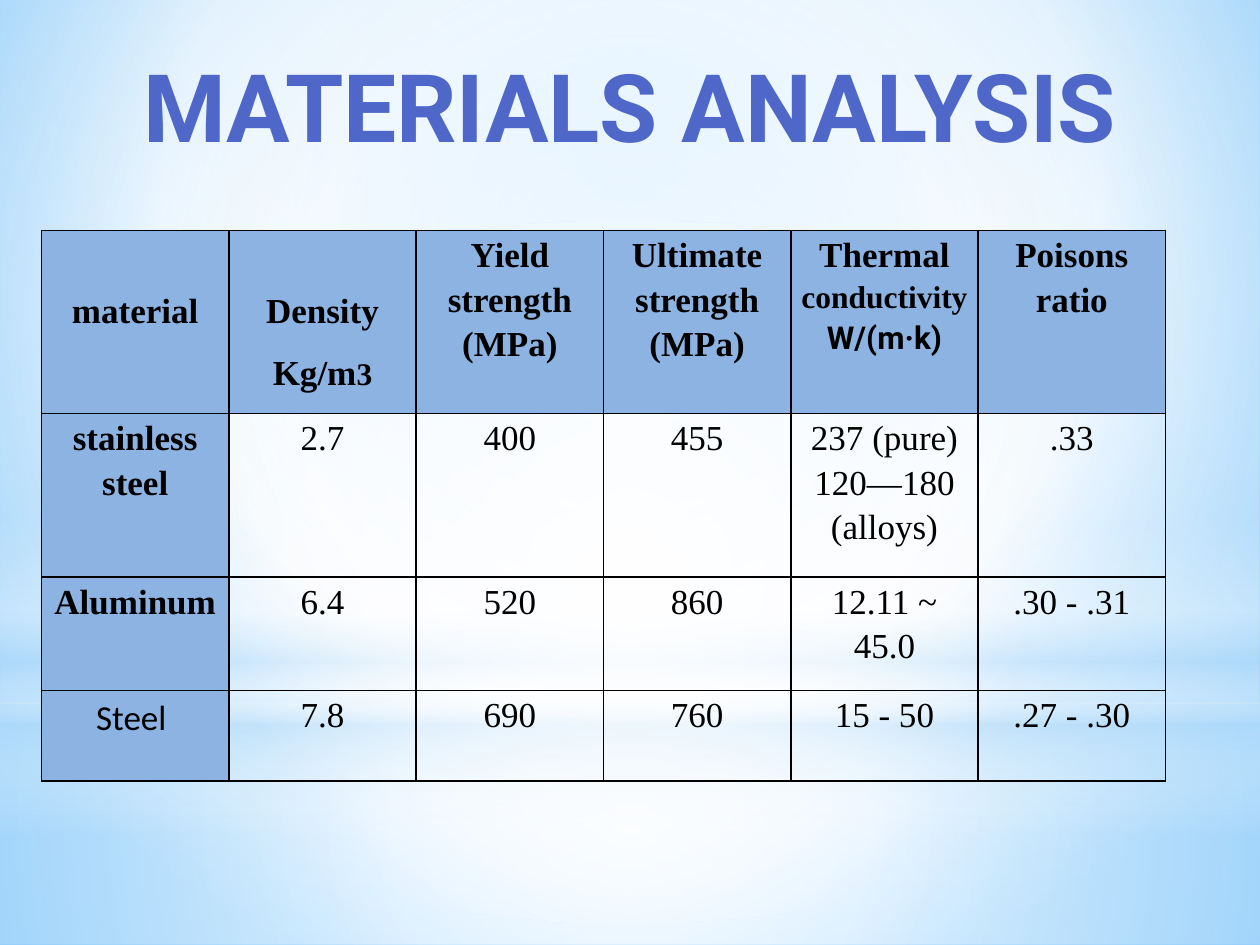
from pptx import Presentation, util as u
from pptx.dml.color import RGBColor
from pptx.enum import shapes, text
from pptx.oxml import parse_xml
from pptx.oxml.ns import nsdecls, qn

INDIGO = RGBColor(0x4E, 0x67, 0xC8)
HEADER_BLUE = RGBColor(0x8D, 0xB3, 0xE2)
BLACK = RGBColor(0, 0, 0)
WHITE = RGBColor(0xFF, 0xFF, 0xFF)
PALE_BLUE = RGBColor(0xB4, 0xDC, 0xFA)
SKY = RGBColor(0x9E, 0xD5, 0xFF)
DEEP_SKY = RGBColor(0x5B, 0xB9, 0xFF)

CENTRE = (50, 50, 50, 50)
SERIF, HEADING, SANS = "Times New Roman", "Roboto", "Calibri"

# A cell is a list of paragraphs; a paragraph is a list of (text, style) runs.
ROWS = [
    [[[("material", {})]],
     [[("Density", {})], [("Kg/m", {}), ("3", {"size": 18})]],
     "Yield strength (MPa)",
     "Ultimate strength\n(MPa)",
     [[("Thermal ", {}), ("conductivity\n", {"size": 18}),
       ("W/(m·k)", {"size": 18, "name": HEADING})]],
     "Poisons ratio"],
    ["stainless steel", "2.7", "400", "455",
     "237 (pure)\n120—180 (alloys)", ".33"],
    ["Aluminum", "6.4", "520", "860", "12.11 ~ 45.0", ".30 - .31"],
    [[[("Steel ", {"name": SANS, "bold": False})]],
     "7.8", "690", "760", "15 - 50", ".27 - .30"],
]
ROW_HEIGHTS = (1.45, 1.3, 0.9, 0.72)
LOWERED_CELLS = {(0, 0), (0, 1)}


class Deck:
    def __init__(self, width=10, height=7.5):
        self.prs = Presentation()
        self.prs.slide_width, self.prs.slide_height = u.Inches(width), u.Inches(height)
        self.s = self.prs.slides.add_slide(self.prs.slide_layouts[6])

    def box(self, x, y, w, h):
        """Turn shares of the slide's size into lengths."""
        width, height = self.prs.slide_width, self.prs.slide_height
        return int(x * width), int(y * height), int(w * width), int(h * height)

    def gradient(self, fill, root, stops, focus=None):
        """Give a fill a circular gradient, or a vertical one without focus.

        Stops are (position, colour, opacity), all in percent.
        """
        fill.solid()
        fill.fore_color.rgb = WHITE
        solid = root.find(".//" + qn("a:solidFill"))
        marks = "".join(
            f'<a:gs pos="{pos * 1000}"><a:srgbClr val="{colour}">'
            f'<a:alpha val="{opacity * 1000}"/></a:srgbClr></a:gs>'
            for pos, colour, opacity in stops)
        if focus:
            sides = " ".join(f'{k}="{v * 1000}"' for k, v in zip("ltrb", focus))
            shade = f'<a:path path="circle"><a:fillToRect {sides}/></a:path>'
        else:
            shade = '<a:lin ang="5400000" scaled="0"/>'
        solid.getparent().replace(solid, parse_xml(
            f'<a:gradFill {nsdecls("a")} rotWithShape="1">'
            f'<a:gsLst>{marks}</a:gsLst>{shade}</a:gradFill>'))

    def background(self, stops, focus):
        self.gradient(self.s.background.fill, self.s.element, stops, focus)

    def glow(self, kind, y, h, stops, focus=None):
        sp = self.s.shapes.add_shape(kind, *self.box(0, y, 1, h))
        sp.shadow.inherit = False
        sp.line.fill.background()
        self.gradient(sp.fill, sp.element, stops, focus)

    def title(self, words, y, h):
        tf = self.s.shapes.add_textbox(*self.box(0, y, 1, h)).text_frame
        tf.word_wrap = True
        tf.auto_size = text.MSO_AUTO_SIZE.SHAPE_TO_FIT_TEXT
        p = tf.paragraphs[0]
        p.text = words
        p.alignment = text.PP_ALIGN.CENTER
        self.style(p.font, size=54, name=HEADING, bold=True, colour=INDIGO)

    @staticmethod
    def style(font, size=None, name=None, bold=None, colour=None):
        if size:
            font.size = u.Pt(size)
        if name:
            font.name = name
        if bold is not None:
            font.bold = bold
        if colour is not None:
            font.color.rgb = colour

    def table(self, rows, heights, x, y, w):
        h = sum(heights) / self.prs.slide_height.inches
        frame = self.s.shapes.add_table(len(rows), len(rows[0]), *self.box(x, y, w, h))
        tbl = frame.table
        tbl.first_row = tbl.horz_banding = False
        for i, row in enumerate(rows):
            tbl.rows[i].height = u.Inches(heights[i])
            for j, content in enumerate(row):
                self.cell(tbl.cell(i, j), content, heading=i == 0 or j == 0,
                          top=0.44 if (i, j) in LOWERED_CELLS else 0)

    def cell(self, cell, content, heading, top):
        cell.margin_left = cell.margin_right = u.Inches(0.07)
        cell.margin_top, cell.margin_bottom = u.Inches(top), 0
        if heading:
            cell.fill.solid()
            cell.fill.fore_color.rgb = HEADER_BLUE
        else:
            cell.fill.background()
        self.borders(cell)
        paragraphs = [[(content, {})]] if isinstance(content, str) else content
        tf = cell.text_frame
        for k, runs in enumerate(paragraphs):
            p = tf.add_paragraph() if k else tf.paragraphs[0]
            p.alignment = text.PP_ALIGN.CENTER
            p.line_spacing, p.space_after = 1.15, u.Pt(10)
            self.style(p.font, size=20, name=SERIF, bold=heading, colour=BLACK)
            for words, look in runs:
                for n, line in enumerate(words.split("\n")):
                    if n:
                        p.add_line_break()
                    if line:
                        r = p.add_run()
                        r.text = line
                        self.style(r.font, **look)

    @staticmethod
    def borders(cell):
        props = cell._tc.get_or_add_tcPr()
        for n, side in enumerate("LRTB"):
            props.insert(n, parse_xml(
                f'<a:ln{side} {nsdecls("a")} w="{u.Pt(1)}"><a:solidFill>'
                f'<a:srgbClr val="{BLACK}"/></a:solidFill></a:ln{side}>'))


def main():
    deck = Deck()
    rect, ellipse = shapes.MSO_SHAPE.RECTANGLE, shapes.MSO_SHAPE.OVAL
    horizon = 0.744
    deck.background([(0, SKY, 100), (60, WHITE, 100), (100, DEEP_SKY, 100)],
                    (20, 10, 20, 60))
    deck.glow(rect, horizon, 1 - horizon,
              [(0, WHITE, 91), (37, WHITE, 76), (100, PALE_BLUE, 79)], CENTRE)
    deck.glow(rect, 0, horizon,
              [(0, WHITE, 89), (48, WHITE, 62), (100, PALE_BLUE, 79)], CENTRE)
    deck.glow(rect, 0.55, 0.333,
              [(0, WHITE, 0), (29, WHITE, 30), (45, PALE_BLUE, 40),
               (55, WHITE, 26), (65, PALE_BLUE, 60), (100, WHITE, 0)])
    deck.glow(ellipse, 0.233, horizon, [(0, WHITE, 100), (56, WHITE, 0)], CENTRE)
    deck.title("MATERIALS ANALYSIS", 0.044, 0.135)
    deck.table(ROWS, ROW_HEIGHTS, 0.033, 0.244, 0.892)
    deck.prs.save("out.pptx")


if __name__ == "__main__":
    main()
